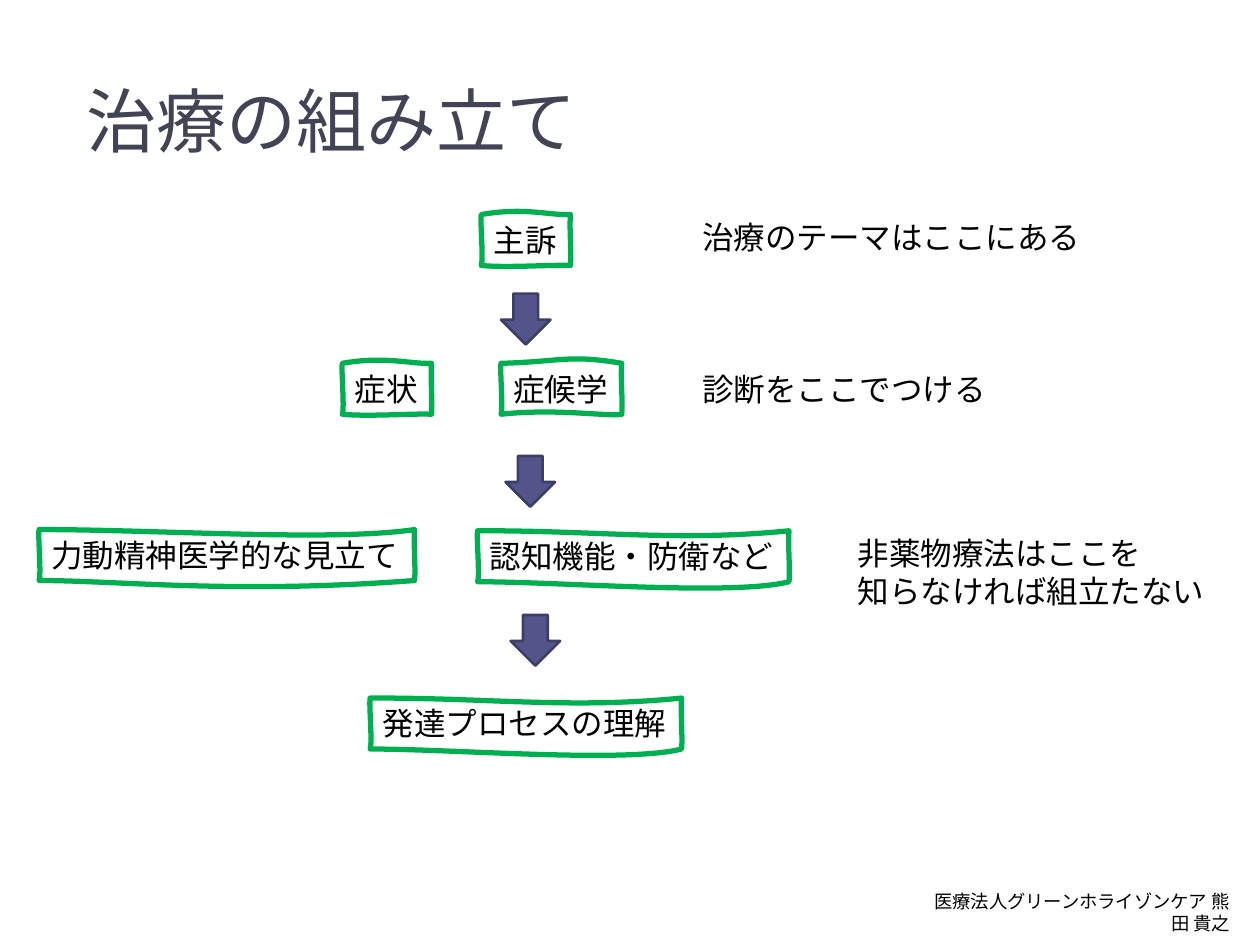
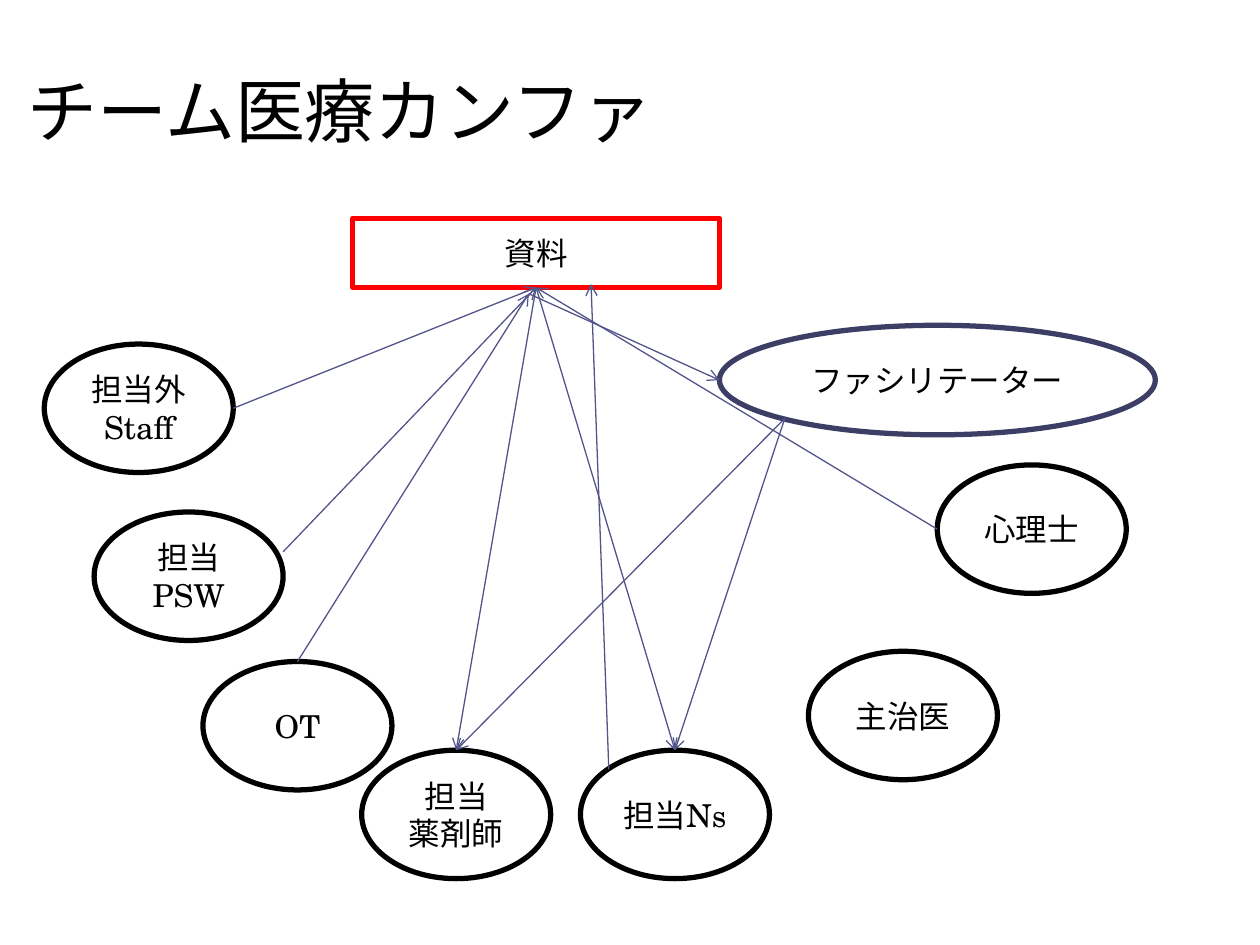
from collections import namedtuple

from lxml.etree import SubElement
from pptx import Presentation
from pptx.dml.color import RGBColor
from pptx.enum.lang import MSO_LANGUAGE_ID as Language
from pptx.enum.shapes import MSO_CONNECTOR as Connector, MSO_SHAPE as Shape
from pptx.enum.text import MSO_ANCHOR as Anchor, PP_ALIGN as Align
from pptx.oxml.ns import qn
from pptx.util import Pt

BLACK = RGBColor(0, 0, 0)
SLATE = RGBColor(0x42, 0x44, 0x56)
INDIGO = RGBColor(0x53, 0x54, 0x8A)
DARK_INDIGO = RGBColor(0x3D, 0x3E, 0x66)
GREEN = RGBColor(0x00, 0xB0, 0x50)
RED = RGBColor(0xFF, 0, 0)

TITLE_FONT = "Karla"
BODY_FONT = "TeX Gyre Schola"
FOOTER_FONT = "Noto Sans CJK JP"

Box = namedtuple("Box", "left top width height")
Step = namedtuple("Step", "text left top width wave")

STEP_HEIGHT = 29.1
SMALL_WAVE = [(0.49, -0.15), (0.76, 0.02)], [(0.82, 0.98), (0.3, 1.05)]
MEDIUM_WAVE = [(0.49, -0.03), (0.56, -0.18)], [(0.89, 1.05), (0.45, 0.88)]
WIDE_WAVE = [(0.38, -0.01), (0.64, 0.22)], [(0.82, 1.28), (0.27, 1)]
WIDEST_WAVE = [(0.32, 0), (0.78, 0.24)], [(0.52, 1.27), (0.21, 1)]

STEPS = [
    Step("主訴", 253, 1.6, 51, SMALL_WAVE),
    Step("症状", 173.6, 86.6, 51, SMALL_WAVE),
    Step("症候学", 264.3, 86.6, 69, MEDIUM_WAVE),
    Step("力動精神医学的な見立て", 0.3, 181.6, 214.6, WIDEST_WAVE),
    Step("認知機能・防衛など", 250.9, 182.3, 178, WIDE_WAVE),
    Step("発達プロセスの理解", 189.5, 277.9, 178, WIDE_WAVE),
]
STEP_NOTES = [
    (["治療のテーマはここにある"], Box(372.2, 0, 232.6, 29)),
    (["診断をここでつける"], Box(372.2, 86.6, 178, 29)),
    (["非薬物療法はここを", "知らなければ組立たない"], Box(461, 180.7, 215, 51)),
]
STEP_ARROWS = [(264.3, 46.8), (266.9, 139.6), (269.8, 230.4)]

MEMBER_SIZE = 108, 73.4
MEMBERS = {
    "主治医": (["主治医"], 436.8, 247.5),
    "Ns": (["担当Ns"], 306.5, 304),
    "薬剤師": (["担当", "薬剤師"], 181.5, 304),
    "PSW": (["担当PSW"], 28.6, 167.9),
    "心理士": (["心理士"], 510.4, 141),
    "Staff": (["担当外", "Staff"], 0.1, 71.9),
    "OT": (["OT"], 90.8, 253.3),
}
TOP, LEFT, BOTTOM, RIGHT = (0.5, 0), (0, 0.5), (0.5, 1), (1, 0.5)
UPPER_LEFT, LOWER_LEFT = (0.15, 0.15), (0.15, 0.85)
BELOW_HANDOUT = (0.48, 1.09)
LINKS = [
    ("OT", TOP, "資料", BELOW_HANDOUT),
    ("資料", BELOW_HANDOUT, "進行", LEFT),
    ("進行", LOWER_LEFT, "薬剤師", TOP),
    ("資料", BOTTOM, "薬剤師", TOP),
    ("資料", BOTTOM, "Ns", TOP),
    ("進行", LOWER_LEFT, "Ns", TOP),
    ("Staff", RIGHT, "資料", BOTTOM),
    ("Ns", UPPER_LEFT, "資料", (0.65, 0.95)),
    ("心理士", LEFT, "資料", BOTTOM),
    ("PSW", (1, 0.31), "資料", BOTTOM),
]
GLUE_SITES = {TOP: 0, BOTTOM: 2}


def within(region, box):
    return Box(region.left + box.left, region.top + box.top, box.width, box.height)


def write(frame, paragraphs, font=BODY_FONT, size=18, color=BLACK,
          align=Align.LEFT, anchor=Anchor.TOP):
    frame.word_wrap = True
    frame.vertical_anchor = anchor
    for number, text in enumerate(paragraphs):
        paragraph = frame.add_paragraph() if number else frame.paragraphs[0]
        paragraph.alignment = align
        run = paragraph.add_run()
        run.text = text
        run.font.language_id = Language.JAPANESE
        run.font.name = font
        run.font.size = Pt(size)
        run.font.color.rgb = color
        SubElement(run.font._element, qn("a:ea")).set("typeface", font)


def add_text(slide, box, paragraphs, **style):
    label = slide.shapes.add_textbox(*map(Pt, box))
    write(label.text_frame, paragraphs, **style)


def add_title(slide, box, text, color):
    add_text(slide, box, [text], font=TITLE_FONT, size=40, color=color,
             anchor=Anchor.MIDDLE)


def paint(shape, line_color, line_width, fill=None):
    shape.shadow.inherit = False
    shape.line.color.rgb = line_color
    shape.line.width = Pt(line_width)
    if fill is None:
        shape.fill.background()
    else:
        shape.fill.solid()
        shape.fill.fore_color.rgb = fill


def bend_sides(outline, controls):
    straight_sides = list(outline._element.iter(qn("a:lnTo")))
    for side, bends in zip(straight_sides, controls):
        side.tag = qn("a:cubicBezTo")
        for position, (x, y) in enumerate(bends):
            bend = SubElement(side, qn("a:pt"))
            bend.set("x", str(x))
            bend.set("y", str(y))
            side.insert(position, bend)


def add_wavy_step(slide, box, text, wave):
    left, top, width, height = map(Pt, box)
    right, bottom = left + width, top + height
    builder = slide.shapes.build_freeform(left, top)
    builder.add_line_segments([(right, top), (right, bottom), (left, bottom), (left, top)])
    outline = builder.convert_to_shape()
    upper, lower = ([(round(x * width), round(y * height)) for x, y in edge] for edge in wave)
    right_bends = [(width - Pt(0.7), round(0.3 * height)),
                   (width + Pt(0.7), round(0.73 * height))]
    left_bends = [(Pt(1.4), round(0.88 * height)), (Pt(-0.7), round(0.15 * height))]
    bend_sides(outline, [upper, right_bends, lower, left_bends])
    paint(outline, GREEN, 3)
    write(outline.text_frame, [text])


def add_treatment_flow(slide, region):
    for step in STEPS:
        box = Box(step.left, step.top, step.width, STEP_HEIGHT)
        add_wavy_step(slide, within(region, box), step.text, step.wave)
    for paragraphs, box in STEP_NOTES:
        add_text(slide, within(region, box), paragraphs)
    for left, top in STEP_ARROWS:
        box = within(region, Box(left, top, 28.3, 29))
        arrow = slide.shapes.add_shape(Shape.DOWN_ARROW, *map(Pt, box))
        paint(arrow, DARK_INDIGO, 1.5, INDIGO)


def add_node(slide, box, kind, paragraphs, color):
    node = slide.shapes.add_shape(kind, *map(Pt, box))
    paint(node, color, 3)
    write(node.text_frame, paragraphs, align=Align.CENTER, anchor=Anchor.MIDDLE)
    return node


def add_link(slide, source, source_site, target, target_site):
    ends = [(round(node.left + across * node.width), round(node.top + down * node.height))
            for node, (across, down) in ((source, source_site), (target, target_site))]
    link = slide.shapes.add_connector(Connector.STRAIGHT, *ends[0], *ends[1])
    if source_site in GLUE_SITES:
        link.begin_connect(source, GLUE_SITES[source_site])
    if target_site in GLUE_SITES:
        link.end_connect(target, GLUE_SITES[target_site])
    link.line.color.rgb = INDIGO
    link.line.width = Pt(0.75)
    SubElement(link.line._get_or_add_ln(), qn("a:tailEnd")).set("type", "arrow")
    SubElement(link._element.spPr, qn("a:effectLst"))


def add_conference_map(slide, region):
    nodes = {
        "進行": add_node(slide, within(region, Box(385.9, 61.2, 249.1, 62.6)),
                       Shape.OVAL, ["ファシリテーター"], DARK_INDIGO),
        "資料": add_node(slide, within(region, Box(176.4, 0, 209.5, 39.6)),
                       Shape.RECTANGLE, ["資料"], RED),
    }
    for name, (paragraphs, left, top) in MEMBERS.items():
        box = within(region, Box(left, top, *MEMBER_SIZE))
        nodes[name] = add_node(slide, box, Shape.OVAL, paragraphs, BLACK)
    for source, source_site, target, target_site in LINKS:
        add_link(slide, nodes[source], source_site, nodes[target], target_site)


def main():
    deck = Presentation()
    deck.slide_width, deck.slide_height = Pt(720), Pt(540)
    blank = deck.slide_layouts[6]

    treatment = deck.slides.add_slide(blank)
    add_title(treatment, Box(42.5, 26.2, 648, 84.2), "治療の組み立て", SLATE)
    add_treatment_flow(treatment, Box(22, 121, 676, 307))
    add_text(treatment, Box(518.4, 505, 191.5, 20.2),
             ["医療法人グリーンホライゾンケア 熊田 貴之"],
             font=FOOTER_FONT, size=10.5, align=Align.RIGHT)

    conference = deck.slides.add_slide(blank)
    add_title(conference, Box(8.6, 20.6, 648, 84.2), "チーム医療カンファ", BLACK)
    add_conference_map(conference, Box(25.2, 124.7, 635, 377))

    deck.save("out.pptx")


if __name__ == "__main__":
    main()
